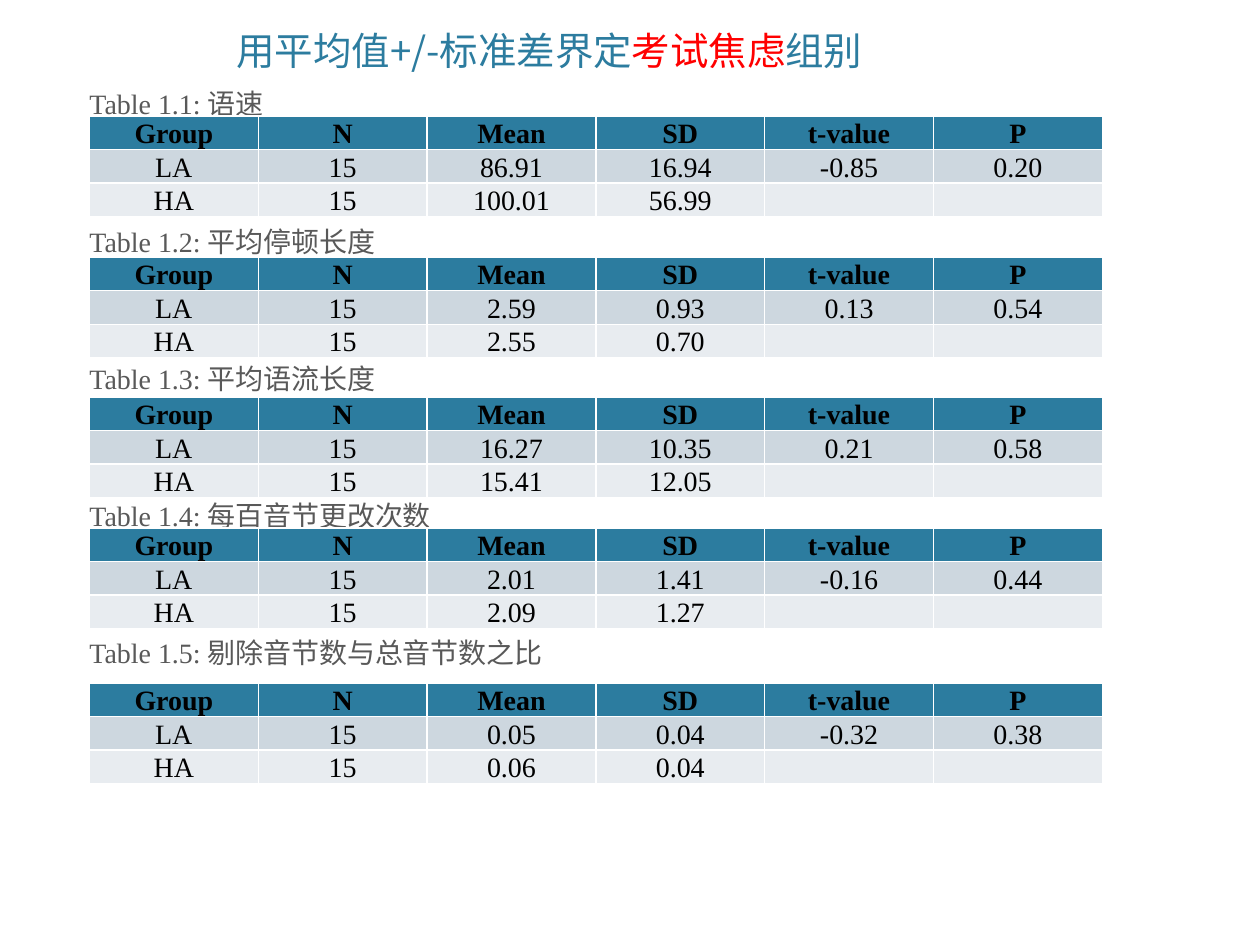
from lxml import etree
from pptx import Presentation, util as u
from pptx.dml.color import RGBColor
from pptx.enum import text
from pptx.oxml.ns import qn

COLORS = {"teal": "2C7C9F", "red": "FF0000", "gray": "595959",
          "black": "000000", "LA": "CDD7DF", "HA": "E8ECF0"}
CJK, LATIN = "Noto Sans CJK SC", "Times New Roman"
HEADERS = ["Group", "N", "Mean", "SD", "t-value", "P"]
TABLES = [
    (12.27, "语速", ["86.91", "16.94", "-0.85", "0.20"], ["100.01", "56.99"]),
    (27.2, "平均停顿长度", ["2.59", "0.93", "0.13", "0.54"], ["2.55", "0.70"]),
    (42, "平均语流长度", ["16.27", "10.35", "0.21", "0.58"], ["15.41", "12.05"]),
    (55.87, "每百音节更改次数", ["2.01", "1.41", "-0.16", "0.44"], ["2.09", "1.27"]),
    (72.27, "剔除音节数与总音节数之比", ["0.05", "0.04", "-0.32", "0.38"], ["0.06", "0.04"]),
]


def col(n):
    """Return n columns of a grid with 100 columns."""
    return u.Inches(n * 10 / 100)


def row(n):
    """Return n rows of a grid with 100 rows."""
    return u.Inches(n * 7.5 / 100)


def rgb(name):
    """Look up a colour by name."""
    return RGBColor.from_string(COLORS[name])


def style(p, size, color, font, bold=False):
    """Set the font of a paragraph, with its East Asian face."""
    p.font.size, p.font.bold, p.font.name = u.Pt(size), bold, font
    p.font.color.rgb = rgb(color)
    props = p._p.pPr.find(qn("a:defRPr"))
    etree.SubElement(props, qn("a:ea"), typeface=CJK)


def add_box(slide, left, top, width, height):
    """Add a wrapping text box and return its text frame."""
    sp = slide.shapes.add_textbox(col(left), row(top), col(width), row(height))
    sp.text_frame.word_wrap = True
    return sp.text_frame


def add_title(slide, parts):
    """Add the centred title from pairs of wording and colour."""
    tf = add_box(slide, -3, -8.27, 93.2, 16.67)
    tf.vertical_anchor = text.MSO_ANCHOR.BOTTOM
    p = tf.paragraphs[0]
    p.alignment = text.PP_ALIGN.CENTER
    style(p, 22, "teal", CJK)
    for words, color in parts:
        r = p.add_run()
        r.text = words
        r.font.color.rgb = rgb(color)


def add_captions(slide, names):
    """Add the numbered table captions at an equal pitch."""
    tf = add_box(slide, 3.4, 8.4, 90, 82)
    tf.margin_left = col(3.7)
    for i, name in enumerate(names):
        p = tf.add_paragraph() if i else tf.paragraphs[0]
        p.text = f"Table 1.{i + 1}: {name}"
        p.line_spacing = u.Pt(20)
        p.space_before = u.Pt(58.3 if i else 0)
        style(p, 16, "gray", LATIN)


def fill_cell(cell, words, fill, bold):
    """Write one table cell and colour it."""
    cell.fill.solid()
    cell.fill.fore_color.rgb = rgb(fill)
    cell.vertical_anchor = text.MSO_ANCHOR.BOTTOM
    cell.margin_left = cell.margin_right = u.Inches(0.07)
    cell.margin_top = cell.margin_bottom = 0
    p = cell.text_frame.paragraphs[0]
    p.text = words
    p.alignment = text.PP_ALIGN.CENTER
    style(p, 16, "black", LATIN, bold)


def add_stats(slide, top, low, high):
    """Add a table that compares the LA and HA groups."""
    lines = [HEADERS, ["LA", "15", *low], ["HA", "15", *high, "", ""]]
    table = slide.shapes.add_table(3, 6, col(7.1), row(top), col(80.4), row(9.9)).table
    for i, (line, fill) in enumerate(zip(lines, ["teal", "LA", "HA"])):
        for j, words in enumerate(line):
            fill_cell(table.cell(i, j), words, fill, i == 0)


def main():
    """Build and save the slide."""
    prs = Presentation()
    prs.slide_width, prs.slide_height = col(100), row(100)
    slide = prs.slides.add_slide(prs.slide_layouts[6])
    add_title(slide, [("用平均值+/-标准差界定", "teal"), ("考试焦虑", "red"), ("组别", "teal")])
    add_captions(slide, [name for _, name, _, _ in TABLES])
    for top, _, low, high in TABLES:
        add_stats(slide, top, low, high)
    prs.save("out.pptx")


if __name__ == "__main__":
    main()
